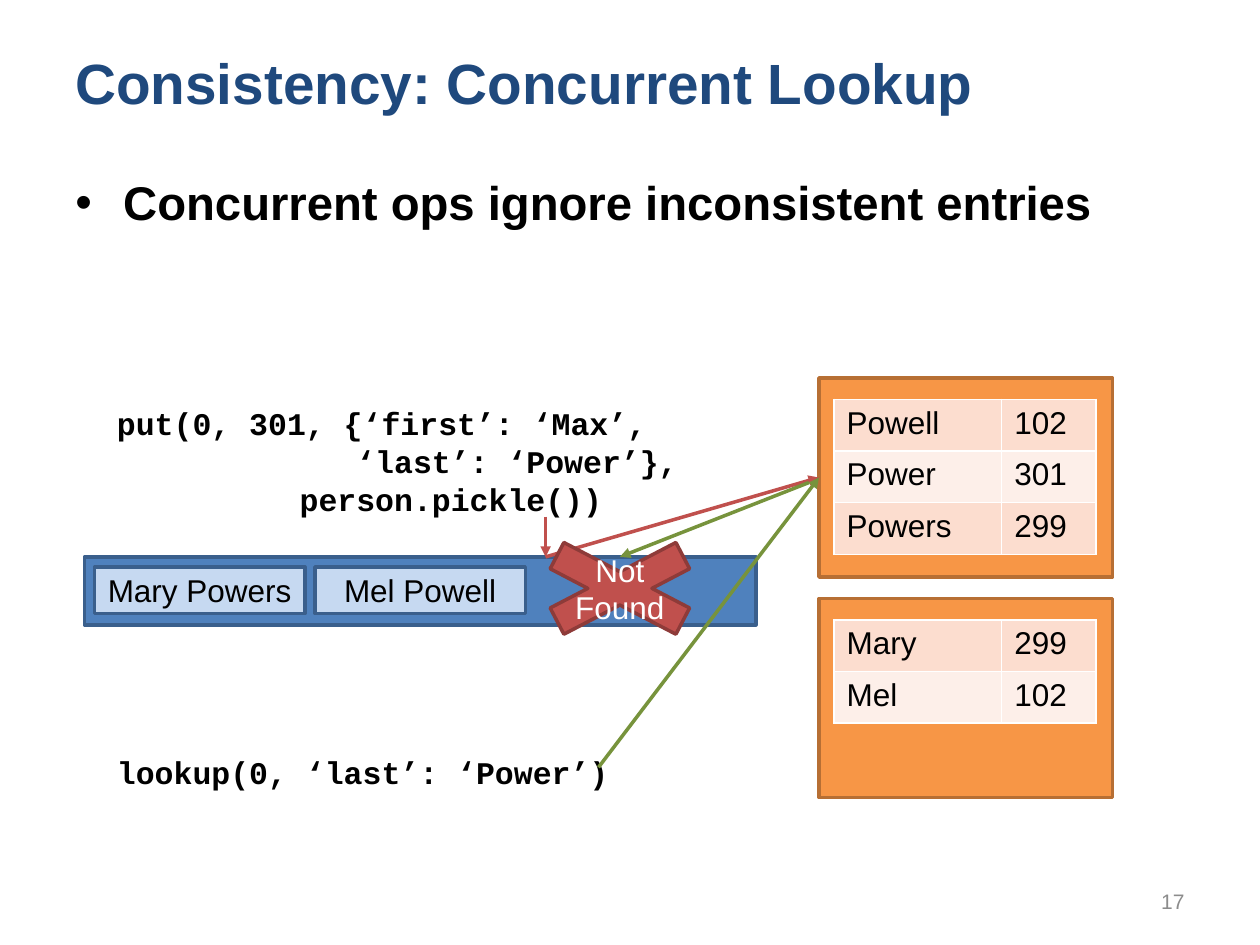
from dataclasses import dataclass

from lxml.etree import SubElement
from pptx import Presentation
from pptx.dml.color import RGBColor
from pptx.enum.shapes import MSO_CONNECTOR as Connector, MSO_SHAPE as Shape
from pptx.enum.text import MSO_ANCHOR as Anchor, PP_ALIGN as Align
from pptx.oxml.ns import qn
from pptx.util import Inches, Pt


@dataclass(frozen=True)
class Theme:
    sans: str = "Arial"
    mono: str = "Courier New"
    title_size: float = 32.4
    bullet_size: float = 27
    body_size: float = 18
    number_size: float = 12
    stroke: float = 2
    black: str = "000000"
    white: str = "FFFFFF"
    navy: str = "1F497D"
    gray: str = "8C8C8C"
    orange: str = "F79646"
    orange_edge: str = "B76F34"
    blue: str = "4F81BD"
    blue_edge: str = "3A5F8C"
    pale_blue: str = "C6D9F1"
    red: str = "C0504D"
    red_edge: str = "8E3B39"
    green: str = "77933C"
    bands: tuple = ("FCDDCF", "FDEFE9")


theme = Theme()
rgb = RGBColor.from_string

prs = Presentation()
prs.slide_width, prs.slide_height = Inches(10), Inches(7.5)
slide = prs.slides.add_slide(prs.slide_layouts[6])
shapes = slide.shapes


def write(frame, text, size=theme.body_size, color=theme.black, font=theme.sans,
          bold=False, align=Align.LEFT, anchor=Anchor.TOP):
    """Fill a text frame, one paragraph per line of text, in one style."""
    frame.text = text
    frame.word_wrap = True
    frame.vertical_anchor = anchor
    for paragraph in frame.paragraphs:
        paragraph.alignment = align
        for run in paragraph.runs:
            run.font.name = font
            run.font.size = Pt(size)
            run.font.bold = bold
            run.font.color.rgb = rgb(color)
    return frame


def add_box(kind, place, fill, edge, text="", color=theme.black):
    box = shapes.add_shape(kind, *map(Inches, place))
    box.shadow.inherit = False
    box.fill.solid()
    box.fill.fore_color.rgb = rgb(fill)
    box.line.color.rgb = rgb(edge)
    box.line.width = Pt(theme.stroke)
    write(box.text_frame, text, color=color, align=Align.CENTER, anchor=Anchor.MIDDLE)


# Title and bullet
title = shapes.add_textbox(Inches(0.5), Inches(0.3), Inches(9), Inches(0.7))
write(title.text_frame, "Consistency: Concurrent Lookup", theme.title_size, theme.navy,
      bold=True, anchor=Anchor.MIDDLE)

summary = shapes.add_textbox(Inches(0.5), Inches(1.33), Inches(9), Inches(5.37))
point = write(summary.text_frame, "Concurrent ops ignore inconsistent entries",
              theme.bullet_size, bold=True).paragraphs[0]
point.space_before = Pt(5.4)
point_props = point._p.get_or_add_pPr()
point_props.set("marL", str(Inches(0.38)))
point_props.set("indent", str(-Inches(0.38)))
SubElement(point_props, qn("a:buFont"), typeface=theme.sans)
SubElement(point_props, qn("a:buChar"), char="•")

# Index panels, each holding a table of keys and addresses
indexes = [
    (3, [("Powell", "102"), ("Power", "301"), ("Powers", "299")]),
    (4.75, [("Mary", "299"), ("Mel", "102")]),
]
row_height = 0.41
for top, entries in indexes:
    add_box(Shape.RECTANGLE, (6.5, top, 2.33, 1.58), theme.orange, theme.orange_edge)
    index = shapes.add_table(len(entries), 2, Inches(6.62), Inches(top + 0.17),
                             Inches(2.08), Inches(row_height * len(entries))).table
    index.first_row = index.horz_banding = False
    for column, width in zip(index.columns, (1.33, 0.75)):
        column.width = Inches(width)
    for r, entry in enumerate(entries):
        index.rows[r].height = Inches(row_height)
        for c, value in enumerate(entry):
            cell = index.cell(r, c)
            write(cell.text_frame, value)
            cell_props = cell._tc.get_or_add_tcPr()
            for side in ("a:lnL", "a:lnR", "a:lnT", "a:lnB"):
                border = SubElement(cell_props, qn(side), w=str(Pt(1)))
                border_fill = SubElement(border, qn("a:solidFill"))
                SubElement(border_fill, qn("a:srgbClr"), val=theme.white)
            cell.fill.solid()
            cell.fill.fore_color.rgb = rgb(theme.bands[r % 2])

# Operations, with the indent of each code line in inches
operations = [
    (3.16, 1.01, [("put(0, 301, {‘first’: ‘Max’,", 0),
                  ("‘last’: ‘Power’},", 1.9),
                  ("person.pickle())", 1.45)]),
    (5.93, 0.4, [("lookup(0, ‘last’: ‘Power’)", 0)]),
]
for top, height, code in operations:
    operation = shapes.add_textbox(Inches(0.83), Inches(top), Inches(8.33), Inches(height))
    frame = write(operation.text_frame, "\n".join(line for line, _ in code),
                  font=theme.mono, bold=True)
    for paragraph, (_, indent) in zip(frame.paragraphs, code):
        paragraph._p.get_or_add_pPr().set("marL", str(Inches(indent)))

# Log with its stored records
add_box(Shape.RECTANGLE, (0.67, 4.42, 5.33, 0.54), theme.blue, theme.blue_edge)
for i, person in enumerate(("Mary Powers", "Mel Powell")):
    add_box(Shape.RECTANGLE, (0.75 + 1.75 * i, 4.5, 1.67, 0.37),
            theme.pale_blue, theme.blue_edge, person)

# Arrows: red for the put, green for the lookup
arrows = [
    ((4.33, 4.1), (4.33, 4.42), theme.red),
    ((4.33, 4.42), (6.5, 3.79), theme.red),
    ((4.75, 6.09), (6.5, 3.79), theme.green),
    ((6.42, 3.83), (4.92, 4.42), theme.green),
]
for start, end, color in arrows:
    arrow = shapes.add_connector(Connector.STRAIGHT, *map(Inches, start + end))
    arrow.line.color.rgb = rgb(color)
    arrow.line.width = Pt(theme.stroke)
    SubElement(arrow.line._get_or_add_ln(), qn("a:tailEnd"), type="triangle")
    SubElement(arrow._element.spPr, qn("a:effectLst"))

add_box(Shape.MATH_MULTIPLY, (3.96, 4.17, 1.92, 1), theme.red, theme.red_edge,
        "Not Found", theme.white)

page_number = shapes.add_textbox(Inches(7.17), Inches(6.95), Inches(2.33), Inches(0.4))
write(page_number.text_frame, "17", theme.number_size, theme.gray,
      align=Align.RIGHT, anchor=Anchor.MIDDLE)

prs.save("out.pptx")
